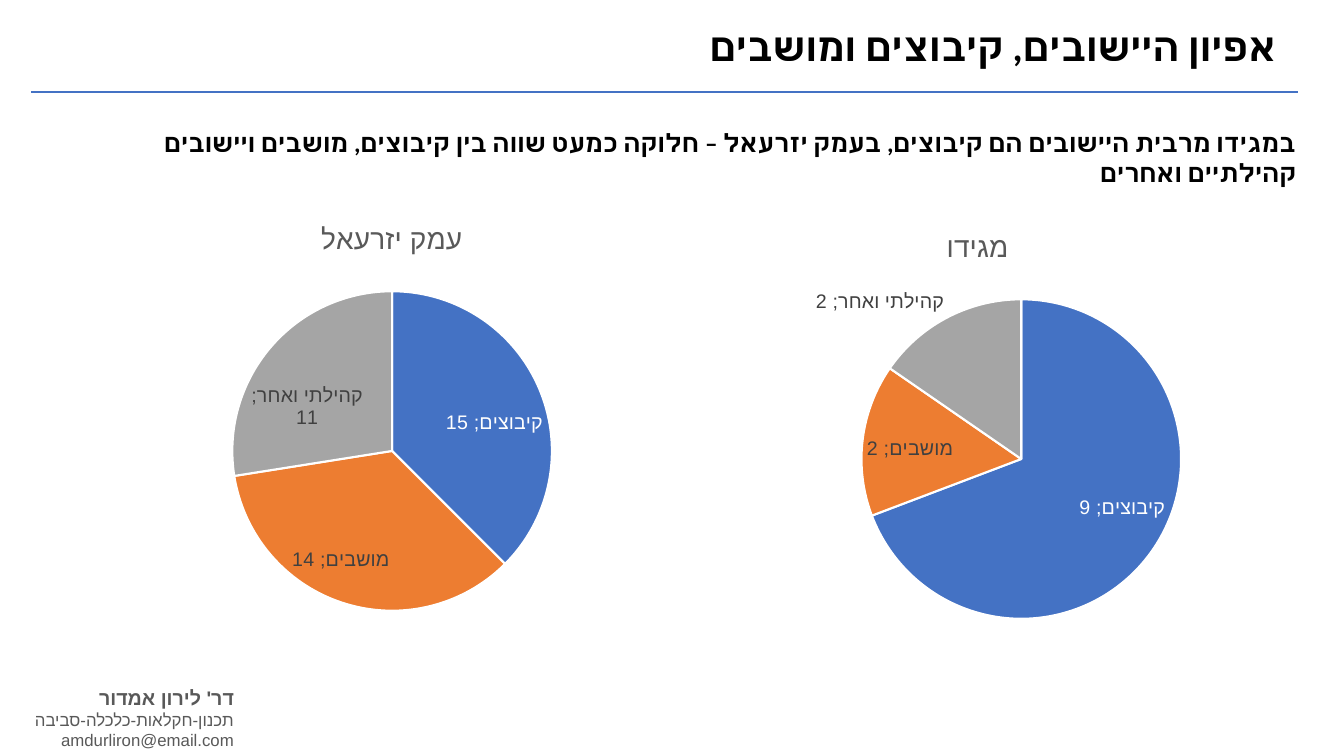
from dataclasses import dataclass

from lxml import etree
from pptx import Presentation
from pptx.chart.data import CategoryChartData
from pptx.dml.color import RGBColor
from pptx.enum.chart import XL_CHART_TYPE, XL_LABEL_POSITION
from pptx.enum.shapes import MSO_CONNECTOR
from pptx.enum.text import MSO_ANCHOR, MSO_AUTO_SIZE, PP_ALIGN
from pptx.oxml import parse_xml
from pptx.oxml.ns import nsdecls, qn
from pptx.util import Inches, Pt

PIE = XL_CHART_TYPE.PIE
BEST = XL_LABEL_POSITION.BEST_FIT
LINE = MSO_CONNECTOR.STRAIGHT
TOP = MSO_ANCHOR.TOP
GROW = MSO_AUTO_SIZE.SHAPE_TO_FIT_TEXT
RIGHT = PP_ALIGN.RIGHT


@dataclass(frozen=True)
class Theme:
    black: str = "000000"
    white: str = "FFFFFF"
    gray: str = "595959"
    label: str = "404040"
    blue: str = "4472C4"
    slices: tuple = ("4472C4", "ED7D31", "A5A5A5")
    head: int = 28
    lead: int = 18
    name: int = 20
    value: int = 14
    small: int = 12
    main: str = "Calibri"
    plain: str = "Arial"


THEME = Theme()
GROUPS = ("קיבוצים", "מושבים", "קהילתי ואחר")

# Pie size and its drop below the chart's top edge, in inches
DISC = 3.17
DROP = 0.89


def style(font, size, color, face, bold=False):
    font.fill.solid()
    font.fill.fore_color.rgb = RGBColor.from_string(color)
    for key, value in {"size": Pt(size), "name": face, "bold": bold}.items():
        setattr(font, key, value)


def set_script(root, face):
    """Set the typeface that Hebrew letters use."""
    for latin in root.iter(qn("a:latin")):
        mark = etree.Element(qn("a:cs"))
        mark.set("typeface", face)
        latin.addnext(mark)


def place(shape, box):
    for key, value in zip(("left", "top", "width", "height"), box):
        setattr(shape, key, Inches(value))


def write(shape, box, lines, color, face):
    """Fill a shape with right-to-left lines of (text, size, bold)."""
    place(shape, box)
    frame = shape.text_frame
    for key, value in {"word_wrap": True, "auto_size": GROW,
                       "vertical_anchor": TOP}.items():
        setattr(frame, key, value)
    for i, (text, size, bold) in enumerate(lines):
        para = frame.add_paragraph() if i else frame.paragraphs[0]
        para.alignment = RIGHT
        para.space_before = Pt(0)
        props = para._p.get_or_add_pPr()
        for key, value in {"marL": "0", "indent": "0", "rtl": "1"}.items():
            props.set(key, value)
        etree.SubElement(props, qn("a:buNone"))
        run = para.add_run()
        run.text = text
        style(run.font, size, color, face, bold)
    set_script(shape.element, face)


def add_head(slide, box):
    left, top, width, height = box
    title = "אפיון היישובים, קיבוצים ומושבים"
    write(slide.shapes.title, (left + 4.18, top, width - 4.29, height),
          [(title, THEME.head, True)], THEME.black, THEME.main)
    # Rule under the title
    y = Inches(top + 0.74)
    rule = slide.shapes.add_connector(
        LINE, Inches(left), y, Inches(left + width), y)
    rule.line.color.rgb = RGBColor.from_string(THEME.blue)
    rule.line.width = Pt(1.5)
    etree.SubElement(rule.element.spPr, qn("a:effectLst"))


def add_lead(slide, box):
    text = ("במגידו מרבית היישובים הם קיבוצים, בעמק יזרעאל – חלוקה כמעט "
            "שווה בין קיבוצים, מושבים ויישובים קהילתיים ואחרים")
    write(slide.placeholders[1], box, [(text, THEME.lead, True)],
          THEME.black, THEME.main)


def add_pie(slide, box, name, values, center):
    """Draw a pie whose middle is `center` inches from the box's left."""
    data = CategoryChartData()
    data.categories = GROUPS
    data.add_series(name, values)
    chart = slide.shapes.add_chart(PIE, *map(Inches, box), data).chart
    chart.has_legend = False
    style(chart.font, 10, THEME.black, THEME.main)

    # Name above the pie
    chart.has_title = True
    chart.chart_title.include_in_layout = False
    para = chart.chart_title.text_frame.paragraphs[0]
    run = para.add_run()
    run.text = name
    style(run.font, THEME.name, THEME.gray, THEME.main)

    # Labels
    plot = chart.plots[0]
    plot.vary_by_categories = True
    series = plot.series[0]
    labels = series.data_labels
    for key, value in {"show_value": True, "show_category_name": True,
                       "show_percentage": False, "position": BEST}.items():
        setattr(labels, key, value)
    style(labels.font, THEME.value, THEME.label, THEME.main)
    first = series.points[0].data_label
    style(first.font, THEME.value, THEME.white, THEME.main)
    first.position = BEST
    for flag in chart.element.xpath(".//c:dLbl/c:showCatName"):
        flag.set("val", "1")

    # Slices
    for i, color in enumerate(THEME.slices):
        form = series.points[i].format
        form.fill.solid()
        form.fill.fore_color.rgb = RGBColor.from_string(color)
        form.line.color.rgb = RGBColor.from_string(THEME.white)
        form.line.width = Pt(1.5)

    # Place of the pie inside the chart
    wide, high = box[2:]
    parts = {"x": (center - DISC / 2) / wide, "y": DROP / high,
             "w": DISC / wide, "h": DISC / high}
    sizes = "".join(f'<c:{k} val="{v:.4f}"/>' for k, v in parts.items())
    area = chart.element.xpath(".//c:plotArea")[0]
    for old in area.findall(qn("c:layout")):
        area.remove(old)
    area.insert(0, parse_xml(
        f'<c:layout {nsdecls("c")}><c:manualLayout>'
        '<c:layoutTarget val="inner"/><c:xMode val="edge"/>'
        f'<c:yMode val="edge"/>{sizes}</c:manualLayout></c:layout>'))
    set_script(chart.element, THEME.plain)


def add_credit(slide, box):
    lines = [("דר' לירון אמדור", THEME.value, True),
             ("תכנון-חקלאות-כלכלה-סביבה", THEME.small, False),
             ("amdurliron@email.com", THEME.small, False)]
    shape = slide.shapes.add_textbox(*map(Inches, box))
    write(shape, box, lines, THEME.gray, THEME.plain)


def main():
    deck = Presentation()
    deck.slide_width = Inches(13.33)
    deck.slide_height = Inches(7.5)
    slide = deck.slides.add_slide(deck.slide_layouts[1])
    add_credit(slide, (0.13, 6.76, 2.29, 0.74))
    add_head(slide, (0.31, 0.17, 12.56, 0.57))
    add_pie(slide, (6.19, 2.08, 7.01, 4.21), "מגידו", (9, 2, 2), 3.94)
    add_pie(slide, (0.46, 2, 6.85, 4.21), "עמק יזרעאל", (15, 14, 11), 3.43)
    add_lead(slide, (0.4, 1.21, 12.56, 0.4))
    deck.save("out.pptx")


if __name__ == "__main__":
    main()
